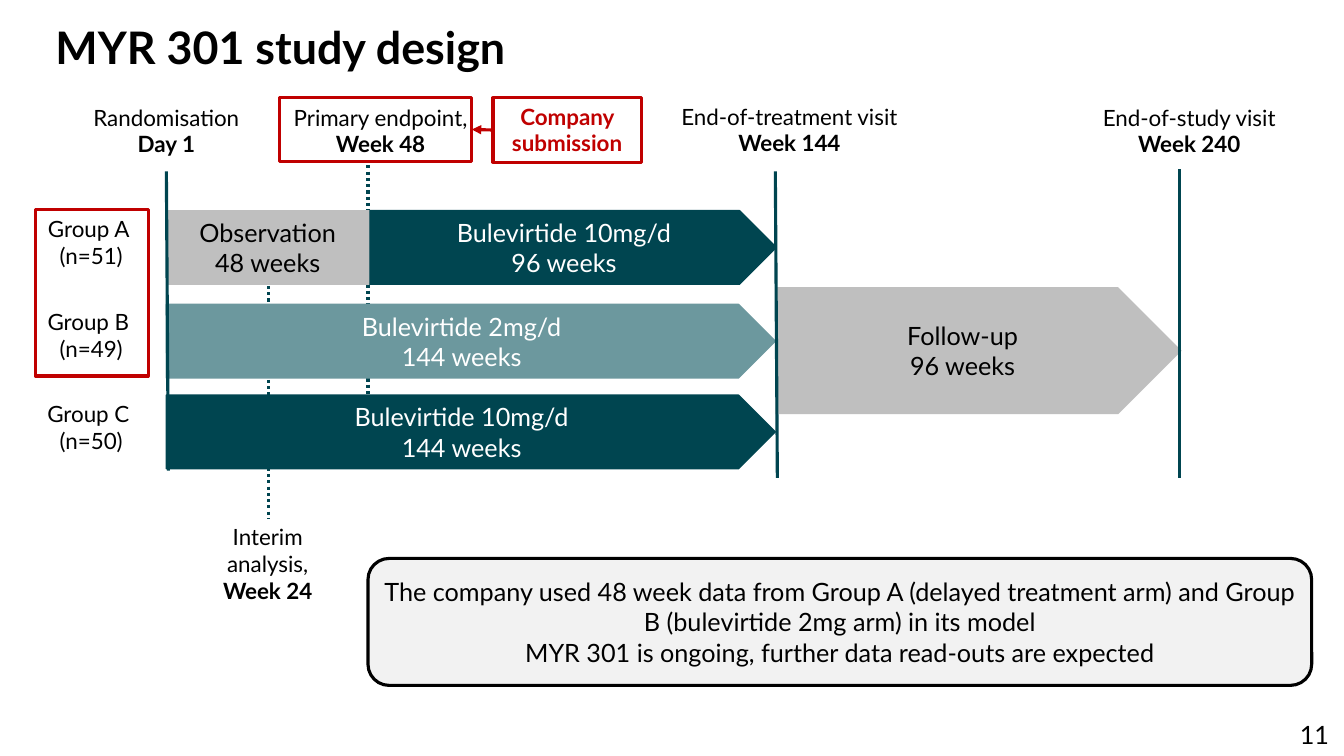
from dataclasses import dataclass

import pptx
import pptx.dml.color
import pptx.enum.dml
import pptx.enum.shapes
import pptx.enum.text
import pptx.oxml
import pptx.oxml.ns
import pptx.util
from pptx.util import Inches

SHAPE = pptx.enum.shapes.MSO_SHAPE
ALIGN = pptx.enum.text.PP_ALIGN
ANCHOR = pptx.enum.text.MSO_ANCHOR


@dataclass(frozen=True)
class Theme:
    font: str = "Lato"
    black: str = "000000"
    white: str = "FFFFFF"
    dark_teal: str = "004550"
    light_teal: str = "6C989E"
    grey: str = "BFBFBF"
    pale_grey: str = "F2F2F2"
    red: str = "C00000"
    title_size: int = 32
    body_size: int = 18
    label_size: int = 16
    thin: float = 1
    thick: float = 2.25


THEME = Theme()


def rgb(value):
    return pptx.dml.color.RGBColor.from_string(value)


def format_text(text_frame, size, color=THEME.black, align=ALIGN.CENTER, bold_lines=()):
    text_frame.word_wrap = True
    for index, paragraph in enumerate(text_frame.paragraphs):
        paragraph.alignment = align
        for run in paragraph.runs:
            run.font.name = THEME.font
            run.font.size = pptx.util.Pt(size)
            run.font.bold = index in bold_lines
            run.font.color.rgb = rgb(color)


def add_title(slide, text):
    title = slide.shapes.title
    title.left, title.top = Inches(0.45), Inches(0.21)
    title.width, title.height = Inches(12.44), Inches(1.4)
    title.text_frame.text = text
    title.text_frame.vertical_anchor = ANCHOR.TOP
    title.text_frame.paragraphs[0].line_spacing = 0.9
    format_text(title.text_frame, THEME.title_size, align=ALIGN.LEFT, bold_lines=(0,))


def add_label(slide, text, left, top, width, height=0.73, size=THEME.label_size,
              align=ALIGN.CENTER, bold_lines=()):
    label = slide.shapes.add_textbox(Inches(left), Inches(top), Inches(width), Inches(height))
    label.text_frame.text = text
    format_text(label.text_frame, size, align=align, bold_lines=bold_lines)


def add_box(slide, kind, left, top, width, height, fill=None, line=None,
            line_width=THEME.thick, text="", color=THEME.black):
    box = slide.shapes.add_shape(kind, Inches(left), Inches(top), Inches(width), Inches(height))
    box.shadow.inherit = False
    if fill:
        box.fill.solid()
        box.fill.fore_color.rgb = rgb(fill)
    else:
        box.fill.background()
    if line:
        box.line.color.rgb = rgb(line)
        box.line.width = pptx.util.Pt(line_width)
    else:
        box.line.fill.background()
    if text:
        box.text_frame.text = text
        box.text_frame.vertical_anchor = ANCHOR.MIDDLE
        format_text(box.text_frame, THEME.body_size, color)
    return box


def add_line(slide, start, end, color=THEME.dark_teal, dotted=False):
    line = slide.shapes.add_connector(
        pptx.enum.shapes.MSO_CONNECTOR.STRAIGHT, *map(Inches, start + end))
    line.line.color.rgb = rgb(color)
    line.line.width = pptx.util.Pt(THEME.thick)
    if dotted:
        line.line.dash_style = pptx.enum.dml.MSO_LINE.ROUND_DOT
    properties = line._element.spPr
    properties.append(pptx.oxml.parse_xml(f'<a:effectLst {pptx.oxml.ns.nsdecls("a")}/>'))
    return line


def add_arrow(slide, source, source_side, target, target_side, color):
    arrow = add_line(slide, (4.89, 1.29), (4.68, 1.29), color)
    arrow.begin_connect(source, source_side)
    arrow.end_connect(target, target_side)
    arrow.line._get_or_add_ln().append(pptx.oxml.parse_xml(
        f'<a:tailEnd {pptx.oxml.ns.nsdecls("a")} type="triangle"/>'))


def add_visits(slide):
    for text, left, top, width in (
        ("End-of-study visit\nWeek 240", 10.7, 0.98, 2.19),
        ("End-of-treatment visit\nWeek 144", 6.53, 0.97, 2.6),
        ("Randomisation\nDay 1", 0.81, 0.98, 1.68),
        ("Primary endpoint,\nWeek 48", 2.77, 0.98, 2.01),
    ):
        add_label(slide, text, left, top, width, bold_lines=(1,))
    add_label(slide, "Interim analysis,\nWeek 24", 2.06, 5.14, 1.19, 1.03, bold_lines=(1,))
    add_line(slide, (3.65, 1.64), (3.65, 4.68), dotted=True)
    add_line(slide, (2.66, 2.09), (2.66, 5.14), dotted=True)


def add_arms(slide):
    for name, count, top in (("A", 51, 2.09), ("B", 49, 3.01), ("C", 50, 3.92)):
        add_label(slide, f"Group {name} \v(n={count})", 0.34, top, 1.13)
    for kind, left, top, width, fill, color, text in (
        (SHAPE.RECTANGLE, 1.65, 2.09, 2.01, THEME.grey, THEME.black,
         "Observation\n48 weeks"),
        (SHAPE.PENTAGON, 3.67, 2.09, 4.03, THEME.dark_teal, THEME.white,
         "Bulevirtide 10mg/d\n96 weeks"),
        (SHAPE.PENTAGON, 1.65, 3.02, 6.04, THEME.light_teal, THEME.white,
         "Bulevirtide 2mg/d\n144 weeks"),
        (SHAPE.PENTAGON, 1.65, 3.92, 6.04, THEME.dark_teal, THEME.white,
         "Bulevirtide 10mg/d\n144 weeks"),
    ):
        add_box(slide, kind, left, top, width, 0.73, fill, fill, THEME.thin, text, color)
    add_box(slide, SHAPE.PENTAGON, 7.69, 2.85, 4.03, 1.26, THEME.grey,
            text="Follow-up\n96 weeks")
    for start, end in (
        ((7.69, 1.7), (7.71, 4.74)),
        ((11.7, 1.68), (11.7, 4.74)),
        ((1.65, 1.7), (1.67, 4.67)),
    ):
        add_line(slide, start, end)


def add_highlights(slide):
    endpoint = add_box(slide, SHAPE.RECTANGLE, 2.77, 0.97, 1.91, 0.63, line=THEME.red)
    add_box(slide, SHAPE.RECTANGLE, 0.35, 2.08, 1.12, 1.65, line=THEME.red)
    submission = add_box(slide, SHAPE.RECTANGLE, 4.89, 0.97, 1.47, 0.64, line=THEME.red,
                         text="Company submission")
    submission.text_frame.vertical_anchor = ANCHOR.TOP
    format_text(submission.text_frame, THEME.label_size, THEME.red, bold_lines=(0,))
    add_arrow(slide, submission, 1, endpoint, 3, THEME.red)


def main():
    presentation = pptx.Presentation()
    presentation.slide_width = Inches(13.33)
    presentation.slide_height = Inches(7.5)
    slide = presentation.slides.add_slide(presentation.slide_layouts[5])
    add_title(slide, "MYR 301 study design")
    add_label(slide, "11", 11.44, 7.09, 1.84, 0.4, THEME.body_size, ALIGN.RIGHT)
    add_visits(slide)
    add_arms(slide)
    add_box(slide, SHAPE.ROUNDED_RECTANGLE, 3.65, 5.54, 9.36, 1.26,
            THEME.pale_grey, THEME.black,
            text="The company used 48 week data from Group A (delayed treatment arm) "
                 "and Group B (bulevirtide 2mg arm) in its model\n"
                 "MYR 301 is ongoing, further data read-outs are expected")
    add_highlights(slide)
    presentation.save("out.pptx")


if __name__ == "__main__":
    main()
